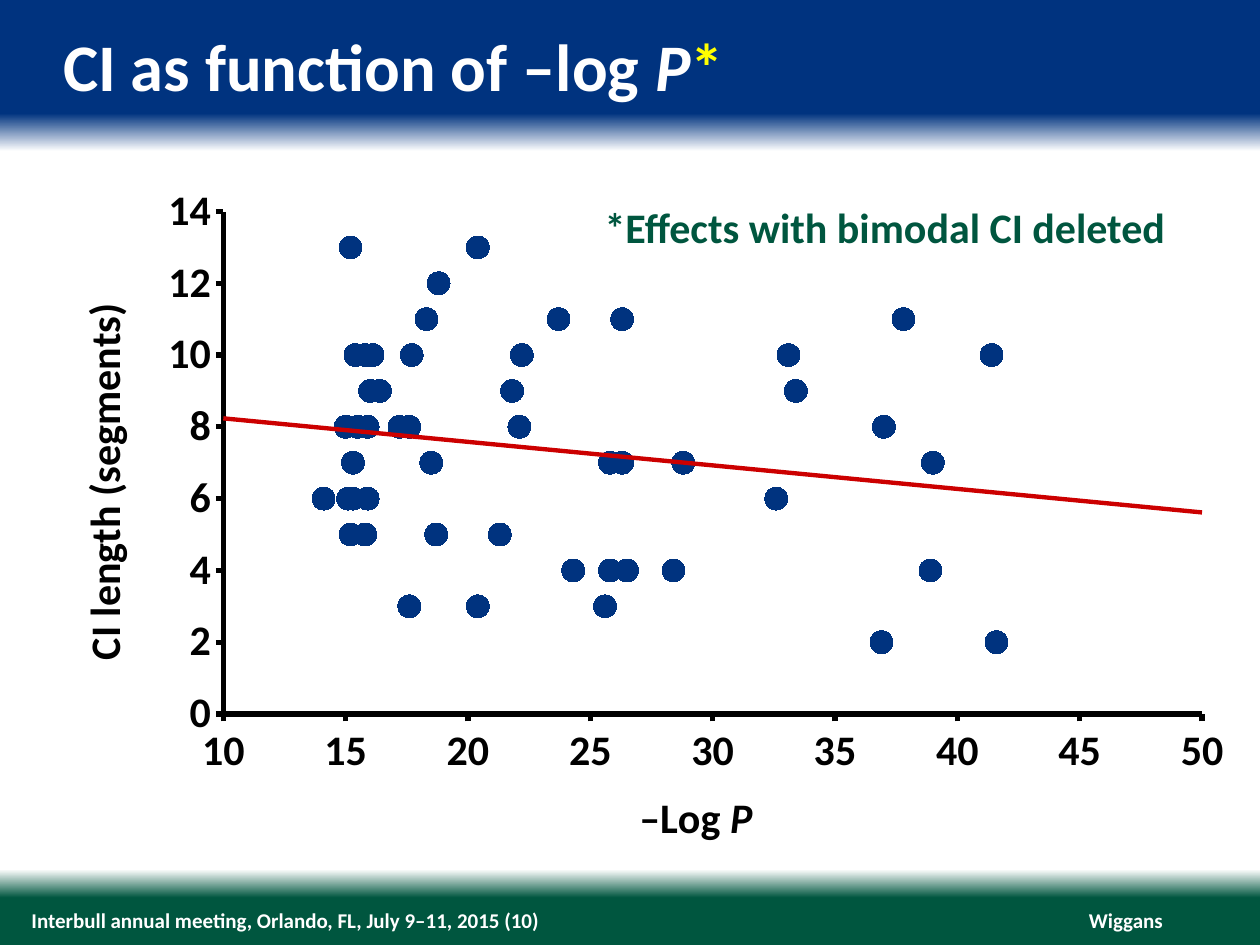
from typing import NamedTuple

from lxml import etree
from pptx import Presentation
from pptx.chart.data import XyChartData
from pptx.dml.color import RGBColor
from pptx.enum.chart import XL_CHART_TYPE as ChartType
from pptx.enum.chart import XL_MARKER_STYLE as MarkerStyle
from pptx.enum.chart import XL_TICK_MARK as TickMark
from pptx.enum.text import MSO_ANCHOR as Anchor
from pptx.enum.text import PP_ALIGN as Align
from pptx.oxml import parse_xml
from pptx.oxml.ns import nsdecls, qn
from pptx.util import Pt

FONT = "Calibri"
NAVY = RGBColor(0x00, 0x33, 0x7F)
GREEN = RGBColor(0x00, 0x56, 0x3F)
RED = RGBColor(0xCC, 0x00, 0x00)
YELLOW = RGBColor(0xFF, 0xFF, 0x00)
WHITE = RGBColor(0xFF, 0xFF, 0xFF)
BLACK = RGBColor(0x00, 0x00, 0x00)

BACKGROUND_STOPS = [(0, NAVY), (12, NAVY), (16, WHITE),
                    (92, WHITE), (95, GREEN), (100, GREEN)]

# (-log P, CI length in segments)
EFFECTS = [
    (15.8, 10), (14.1, 6), (36.9, 2), (20.4, 3), (39.0, 7),
    (15.9, 6), (41.6, 2), (32.6, 6), (18.7, 5), (38.9, 4),
    (17.6, 8), (15.9, 8), (18.3, 11), (25.6, 3), (16.1, 10),
    (26.3, 7), (26.5, 4), (28.8, 7), (28.4, 4), (22.2, 10),
    (21.3, 5), (15.5, 8), (18.8, 12), (17.6, 3), (15.1, 6),
    (26.3, 11), (17.7, 10), (41.4, 10), (23.7, 11), (16.0, 9),
    (15.3, 6), (33.4, 9), (21.8, 9), (33.1, 10), (24.3, 4),
    (22.1, 8), (25.8, 7), (25.8, 4), (18.5, 7), (37.8, 11),
    (15.3, 7), (17.2, 8), (15.8, 5), (16.4, 9), (15.2, 5),
    (15.4, 10), (20.4, 13), (15.0, 8), (37.0, 8), (15.2, 13),
]
X_MIN, X_MAX = 10, 50


class Span(NamedTuple):
    text: str
    color: RGBColor
    italic: bool = False


class Label(NamedTuple):
    text: str
    left: float
    top: float
    width: float
    height: float
    size: float
    color: RGBColor
    align: Align = Align.LEFT
    anchor: Anchor = Anchor.TOP
    inset: tuple[float, float] = (0, 0)
    wrap: bool = True


LABELS = [
    Label("Wiggans", 622, 518.4, 42.5, 14.4, 12, WHITE,
          align=Align.RIGHT, anchor=Anchor.MIDDLE, wrap=False),
    Label("Interbull annual meeting, Orlando, FL, July 9–11, 2015 (10)",
          18, 518.4, 534, 14.4, 12, WHITE, anchor=Anchor.MIDDLE),
    Label("*Effects with bimodal CI deleted", 338.4, 111.6, 337, 36, 24, GREEN,
          inset=(7.2, 3.6)),
]


def write(frame, spans: list[Span], *, size: float, align=None) -> None:
    para = frame.paragraphs[0]
    if align is not None:
        para.alignment = align
    for span in spans:
        run = para.add_run()
        run.text = span.text
        font = run.font
        font.name, font.size, font.bold = FONT, Pt(size), True
        font.italic = span.italic
        font.color.rgb = span.color


def set_frame(frame, *, anchor, inset=(0, 0), wrap=True) -> None:
    frame.word_wrap = wrap
    frame.vertical_anchor = anchor
    frame.margin_left = frame.margin_right = Pt(inset[0])
    frame.margin_top = frame.margin_bottom = Pt(inset[1])


def add_label(page, label: Label) -> None:
    box = page.shapes.add_textbox(Pt(label.left), Pt(label.top),
                                  Pt(label.width), Pt(label.height))
    set_frame(box.text_frame, anchor=label.anchor, inset=label.inset, wrap=label.wrap)
    write(box.text_frame, [Span(label.text, label.color)],
          size=label.size, align=label.align)


def paint_background(page) -> None:
    fill = page.background.fill
    fill.gradient()
    fill.gradient_angle = 270
    stops = next(page.background._cSld.iter(qn("a:gsLst")))
    for stop in list(stops):
        stops.remove(stop)
    for percent, color in BACKGROUND_STOPS:
        stop = etree.SubElement(stops, qn("a:gs"), pos=str(percent * 1000))
        etree.SubElement(stop, qn("a:srgbClr"), val=str(color))


def style_axis(axis, low: float, high: float, step: float, title: list[Span]) -> None:
    axis.minimum_scale, axis.maximum_scale, axis.major_unit = low, high, step
    axis.has_major_gridlines = False
    axis.major_tick_mark = TickMark.OUTSIDE
    axis.minor_tick_mark = TickMark.NONE
    axis.format.line.color.rgb = BLACK
    axis.format.line.width = Pt(3)
    axis.tick_labels.number_format = "General"
    axis.tick_labels.number_format_is_linked = False
    write(axis.axis_title.text_frame, title, size=24)


def place_plot(chart, x: float, y: float, width: float, height: float) -> None:
    """Fix the inner plot area, in fractions of the chart."""
    plot_area = chart._chartSpace.chart.plotArea
    for old in plot_area.findall(qn("c:layout")):
        plot_area.remove(old)
    plot_area.insert(0, parse_xml(
        f'<c:layout {nsdecls("c")}><c:manualLayout><c:layoutTarget val="inner"/>'
        '<c:xMode val="edge"/><c:yMode val="edge"/>'
        f'<c:x val="{x}"/><c:y val="{y}"/><c:w val="{width}"/><c:h val="{height}"/>'
        '</c:manualLayout></c:layout>'))


def add_trend(series) -> None:
    """Add a linear trend line that spans the whole x axis."""
    x_values = [x for x, _ in EFFECTS]
    forward = round(X_MAX - max(x_values), 1)
    backward = round(min(x_values) - X_MIN, 1)
    trend = parse_xml(
        f'<c:trendline {nsdecls("c", "a")}><c:spPr><a:ln w="{Pt(2.5)}"><a:solidFill>'
        f'<a:srgbClr val="{RED}"/></a:solidFill></a:ln></c:spPr>'
        f'<c:trendlineType val="linear"/><c:forward val="{forward}"/>'
        f'<c:backward val="{backward}"/><c:dispRSqr val="0"/><c:dispEq val="0"/>'
        '</c:trendline>')
    series._element.find(qn("c:xVal")).addprevious(trend)


def add_scatter(page) -> None:
    data = XyChartData()
    points = data.add_series("Series 1")
    for x, y in EFFECTS:
        points.add_data_point(x, y)
    chart = page.shapes.add_chart(ChartType.XY_SCATTER, Pt(31), Pt(87.8),
                                  Pt(680.4), Pt(398.9), data).chart
    chart.has_title = chart.has_legend = False
    font = chart.font
    font.name, font.size, font.bold = FONT, Pt(24), True
    font.color.rgb = BLACK
    chart.plots[0].vary_by_categories = False

    style_axis(chart.category_axis, X_MIN, X_MAX, 5,
               [Span("–Log ", BLACK), Span("P", BLACK, italic=True)])
    style_axis(chart.value_axis, 0, 14, 2, [Span("CI length (segments)", BLACK)])
    body = next(chart.value_axis.axis_title._element.iter(qn("a:bodyPr")))
    body.set("rot", "-5400000")
    body.set("vert", "horz")
    place_plot(chart, 0.142, 0.083, 0.822, 0.72)

    series = chart.plots[0].series[0]
    series.format.line.fill.background()
    marker = series.marker
    marker.style, marker.size = MarkerStyle.CIRCLE, 13
    marker.format.fill.solid()
    marker.format.fill.fore_color.rgb = NAVY
    marker.format.line.color.rgb = NAVY
    add_trend(series)


def main() -> None:
    deck = Presentation()
    deck.slide_width, deck.slide_height = Pt(720), Pt(540)
    page = deck.slides.add_slide(deck.slide_layouts[5])
    paint_background(page)

    title = page.shapes.title
    title.left, title.top, title.width, title.height = Pt(36), Pt(14.4), Pt(648), Pt(46)
    set_frame(title.text_frame, anchor=Anchor.TOP)
    write(title.text_frame,
          [Span("CI as function of –log ", WHITE), Span("P", WHITE, italic=True),
           Span("*", YELLOW)], size=38, align=Align.LEFT)

    add_scatter(page)
    for label in LABELS:
        add_label(page, label)
    deck.save("out.pptx")


if __name__ == "__main__":
    main()
